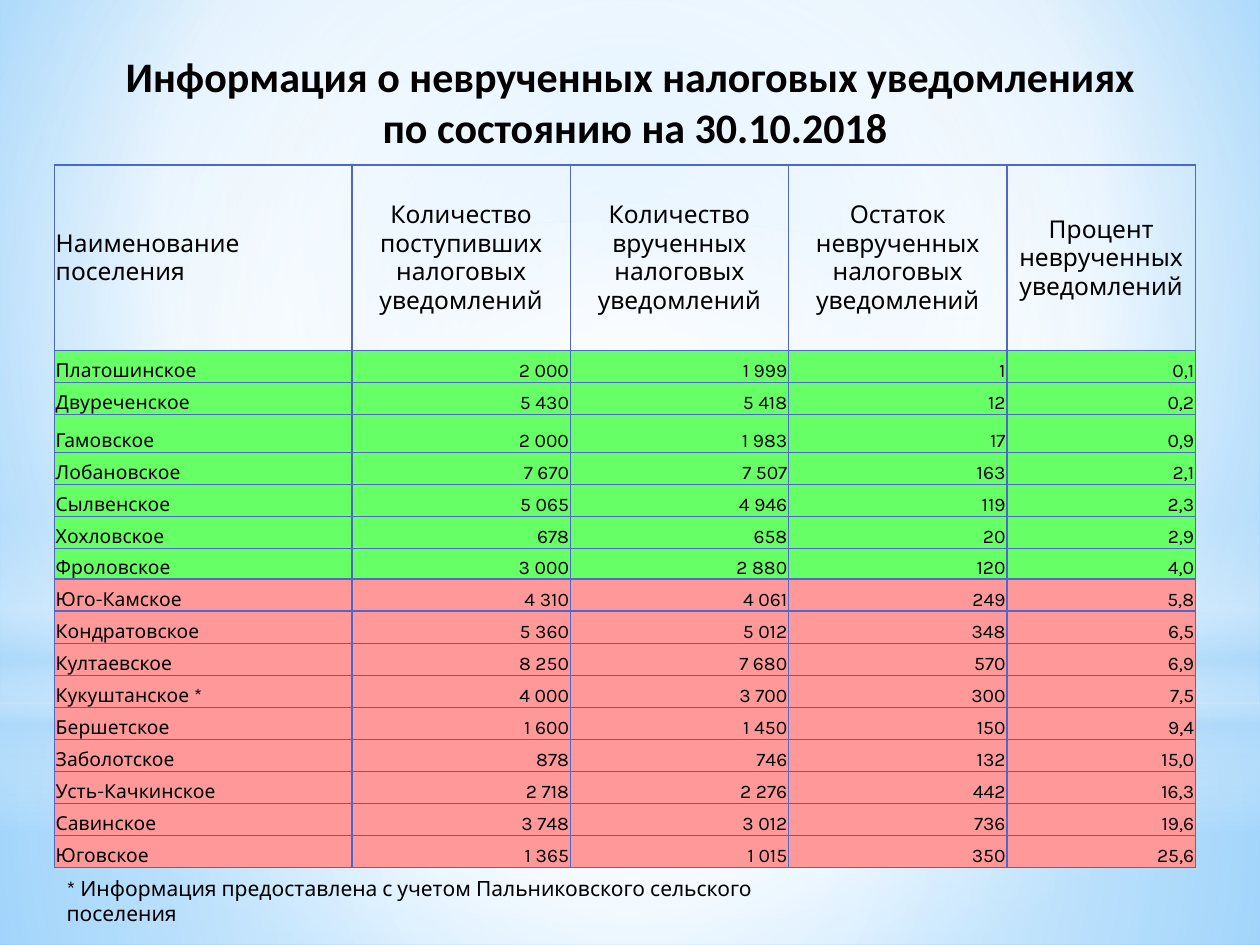
import pptx
import pptx.util
import pptx.dml.color
import pptx.enum.shapes
import pptx.enum.text
import pptx.oxml
import pptx.oxml.ns

Pt = pptx.util.Pt
RGB = pptx.dml.color.RGBColor.from_string
Align = pptx.enum.text.PP_ALIGN
Anchor = pptx.enum.text.MSO_ANCHOR
Kind = pptx.enum.shapes.MSO_SHAPE
tag = pptx.oxml.ns.qn
space = pptx.oxml.ns.nsdecls("a")

hues = {
    "text": "000000", "line": "4E67C8", "good": "66FF66", "bad": "FF9999",
    "white": "FFFFFF", "mist": "B4DCFA", "sky": "9ED5FF", "blue": "5BB9FF",
}


def shade(fill, node, stops, focus):
    fill.gradient()
    marks = "".join(
        f'<a:gs pos="{pos * 1000}"><a:srgbClr val="{hues[hue]}">'
        f'<a:alpha val="{alpha * 1000}"/></a:srgbClr></a:gs>'
        for pos, hue, alpha in stops)
    if focus:
        left, top, right, bottom = (n * 1000 for n in focus)
        course = (f'<a:path path="circle"><a:fillToRect l="{left}" t="{top}" '
                  f'r="{right}" b="{bottom}"/></a:path>')
    else:
        course = '<a:lin ang="5400000" scaled="0"/>'
    new = pptx.oxml.parse_xml(
        f'<a:gradFill {space} rotWithShape="1"><a:gsLst>{marks}</a:gsLst>{course}</a:gradFill>')
    old = node.find(".//" + tag("a:gradFill"))
    old.getparent().replace(old, new)


def write(cell, text, size, font, align, anchor, bold=False, line=None, back=None):
    cell.text = text
    cell.margin_left = cell.margin_top = cell.margin_right = Pt(0.75)
    cell.margin_bottom = 0
    cell.vertical_anchor = anchor
    for para in cell.text_frame.paragraphs:
        para.alignment = align
        para.font.size = Pt(size)
        para.font.name = font
        para.font.bold = bold
        para.font.color.rgb = RGB(hues["text"])
    paint = (f'<a:solidFill><a:srgbClr val="{hues[line]}"/></a:solidFill>'
             if line else "<a:noFill/>")
    props = cell._tc.get_or_add_tcPr()
    for edge in ("lnL", "lnR", "lnT", "lnB"):
        props.append(pptx.oxml.parse_xml(
            f'<a:{edge} {space} w="12700">{paint}</a:{edge}>'))
    if back:
        cell.fill.solid()
        cell.fill.fore_color.rgb = RGB(hues[back])
    else:
        cell.fill.background()


deck = pptx.Presentation()
deck.slide_width, deck.slide_height = Pt(720), Pt(540)
slide = deck.slides.add_slide(deck.slide_layouts[6])
shade(slide.background.fill, slide.element,
      [(0, "sky", 100), (60, "white", 100), (100, "blue", 100)], (20, 10, 20, 60))

mid = (50, 50, 50, 50)
glows = [
    (Kind.RECTANGLE, 401.76, 138.24,
     [(0, "white", 91), (37, "white", 76), (100, "mist", 79)], mid),
    (Kind.RECTANGLE, 0, 401.76,
     [(0, "white", 89), (48, "white", 62), (100, "mist", 79)], mid),
    (Kind.RECTANGLE, 296.64, 180,
     [(0, "white", 0), (29, "white", 30), (45, "mist", 40),
      (55, "white", 26), (65, "mist", 60), (100, "white", 0)], None),
    (Kind.OVAL, 126, 401.76, [(0, "white", 100), (56, "white", 0)], mid),
]
for kind, top, height, stops, focus in glows:
    glow = slide.shapes.add_shape(kind, 0, Pt(top), Pt(720), Pt(height))
    glow.shadow.inherit = False
    glow.line.fill.background()
    shade(glow.fill, glow.element, stops, focus)

rows = [line.split("|") for line in (
    "Наименование поселения|Количество поступивших налоговых уведомлений|"
    "Количество врученных налоговых уведомлений|"
    "Остаток неврученных налоговых уведомлений|Процент неврученных уведомлений",
    "Платошинское|2 000|1 999|1|0,1",
    "Двуреченское|5 430|5 418|12|0,2",
    "Гамовское|2 000|1 983|17|0,9",
    "Лобановское|7 670|7 507|163|2,1",
    "Сылвенское|5 065|4 946|119|2,3",
    "Хохловское|678|658|20|2,9",
    "Фроловское|3 000|2 880|120|4,0",
    "Юго-Камское|4 310|4 061|249|5,8",
    "Кондратовское|5 360|5 012|348|6,5",
    "Култаевское|8 250|7 680|570|6,9",
    "Кукуштанское *|4 000|3 700|300|7,5",
    "Бершетское|1 600|1 450|150|9,4",
    "Заболотское|878|746|132|15,0",
    "Усть-Качкинское|2 718|2 276|442|16,3",
    "Савинское|3 748|3 012|736|19,6",
    "Юговское|1 365|1 015|350|25,6",
)]
widths = [170.1, 124.75, 124.75, 124.75, 107.8]
heights = {0: 106, 3: 21.6, 7: 17.5}
table = slide.shapes.add_table(len(rows), len(widths), Pt(31.1), Pt(94.3),
                               Pt(sum(widths)), Pt(401.76)).table
table.first_row = table.horz_banding = False
for col, width in zip(table.columns, widths):
    col.width = Pt(width)

for i, row in enumerate(rows):
    table.rows[i].height = Pt(heights.get(i, 18.32))
    size, side, anchor, back = (
        (14, Align.CENTER, Anchor.MIDDLE, None) if i == 0
        else (11, Align.RIGHT, Anchor.BOTTOM, "good" if i < 8 else "bad"))
    for j, text in enumerate(row):
        write(table.cell(i, j), text, size, "Karla", side if j else Align.LEFT,
              anchor, line="line", back=back)

head = slide.shapes.add_table(1, 1, Pt(54), Pt(15.12), Pt(617.76), Pt(73.44)).table
head.first_row = head.horz_banding = False
write(head.cell(0, 0),
      "Информация о неврученных налоговых уведомлениях \nпо состоянию на 30.10.2018",
      24, "Calibri", Align.CENTER, Anchor.BOTTOM, bold=True)

note = slide.shapes.add_textbox(Pt(31), Pt(496.8), Pt(449.3), Pt(21.6)).text_frame
note.word_wrap = True
note.text = "* Информация предоставлена с учетом Пальниковского сельского поселения"
para = note.paragraphs[0]
para.font.size = Pt(12)
para.font.name = "Karla"
para.font.color.rgb = RGB(hues["text"])

deck.save("out.pptx")
